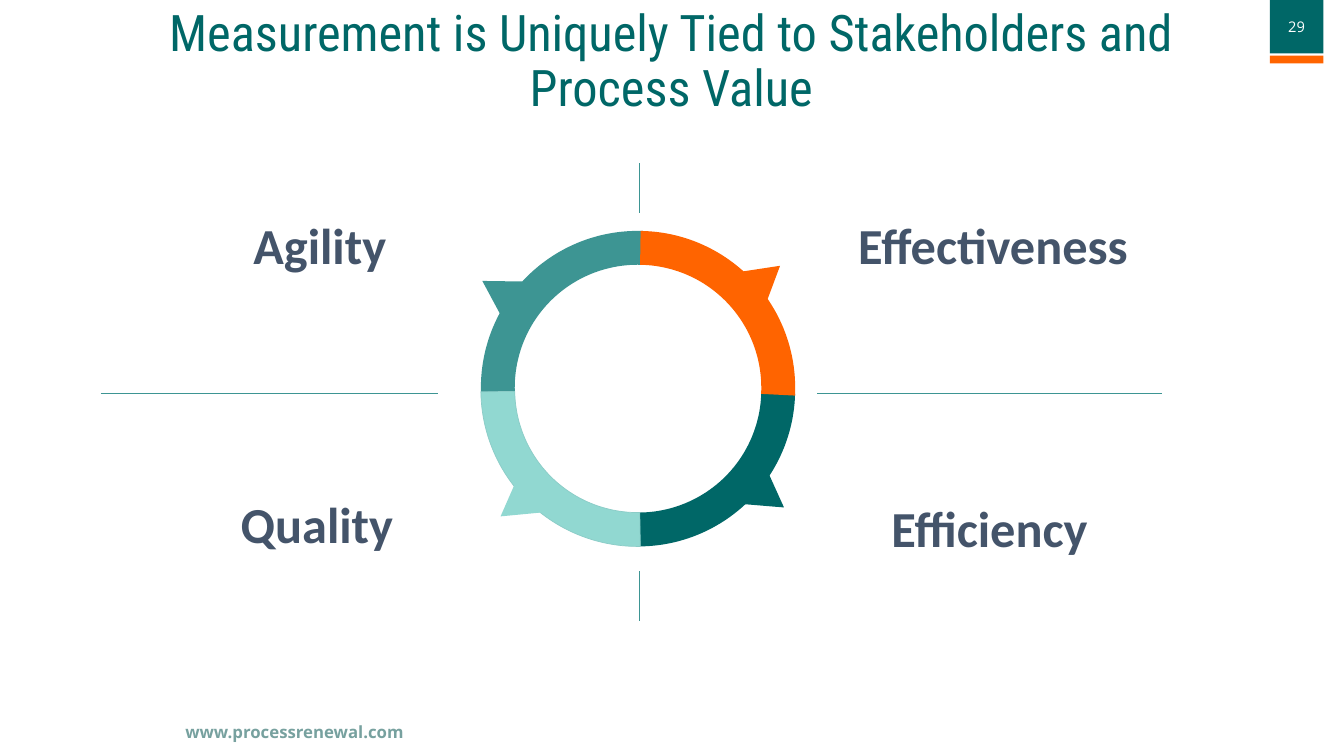
"""Builds the slide on measurement, stakeholders and process value."""
from dataclasses import dataclass

from lxml.etree import SubElement
from pptx import Presentation
from pptx.dml.color import RGBColor
from pptx.enum.shapes import MSO_CONNECTOR, MSO_SHAPE
from pptx.enum.text import MSO_ANCHOR, PP_ALIGN
from pptx.oxml.ns import qn
from pptx.shapes.autoshape import Shape
from pptx.slide import Slide
from pptx.util import Cm, Pt


@dataclass(frozen=True)
class Theme:
    """Colours, fonts and type sizes."""
    dark: str = "006767"
    teal: str = "3D9593"
    mint: str = "91D8D1"
    mint_edge: str = "8BCCC7"
    orange: str = "FF6400"
    slate: str = "44546A"
    footer: str = "77A19F"
    white: str = "FFFFFF"
    title_font: str = "Roboto Condensed"
    label_font: str = "Calibri"
    small_font: str = "Open Sans"
    large_size: float = 36
    footer_size: float = 12
    number_size: float = 10.5
    line_width: float = 0.5


@dataclass(frozen=True)
class Box:
    """Place and size in centimetres."""
    left: float
    top: float
    width: float
    height: float


@dataclass(frozen=True)
class Caption:
    """A text with its box and look."""
    text: str
    box: Box
    font: str
    size: float
    color: str
    bold: bool = False
    align: PP_ALIGN = PP_ALIGN.CENTER
    anchor: MSO_ANCHOR = MSO_ANCHOR.TOP
    line_spacing: float = 1.0


@dataclass(frozen=True)
class Segment:
    """A ring quarter, in clockwise degrees from the right, and its pointer."""
    color: str
    left: float
    top: float
    start: float
    end: float
    pointer_left: float
    pointer_top: float
    pointer_rotation: float
    edge: str = ""


@dataclass(frozen=True)
class Divider:
    """A straight line between two points in centimetres."""
    start_x: float
    start_y: float
    end_x: float
    end_y: float


THEME = Theme()
RING_SIZE = 7.9
RING_THICKNESS = 0.108
POINTER_WIDTH, POINTER_HEIGHT = 1.07, 0.91
ADJUSTMENT_PER_DEGREE = 0.6

SEGMENTS = [
    Segment(THEME.teal, 12.12, 5.82, 178, 272.4, 12.01, 6.86, 301.3),
    Segment(THEME.dark, 12.14, 5.87, 1.5, 90.9, 18.85, 12.07, 125.2),
    Segment(THEME.mint, 12.12, 5.87, 89, 179.2, 12.45, 12.29, 234.1, THEME.mint_edge),
    Segment(THEME.orange, 12.14, 5.82, 270.8, 2.9, 18.77, 6.53, 50.9),
]
DIVIDERS = [
    Divider(2.54, 9.91, 11.05, 9.91),
    Divider(20.6, 9.91, 29.29, 9.91),
    Divider(16.1, 4.11, 16.1, 5.36),
    Divider(16.12, 14.4, 16.12, 15.65),
]
LABELS = {
    "Agility ": Box(3, 5.26, 10.41, 1.8),
    "Quality ": Box(3.05, 12.29, 10.16, 1.8),
    "Effectiveness ": Box(19.91, 5.26, 10.52, 1.8),
    "Efficiency ": Box(19.86, 12.4, 10.44, 1.8),
}
CAPTIONS = [
    Caption("29", Box(31.67, 0.03, 2.01, 1.3), THEME.small_font, THEME.number_size,
            THEME.white, anchor=MSO_ANCHOR.MIDDLE),
    Caption("www.processrenewal.com", Box(4.42, 18.06, 6.3, 0.76), THEME.small_font,
            THEME.footer_size, THEME.footer, bold=True, align=PP_ALIGN.LEFT),
    Caption("Measurement is Uniquely Tied to Stakeholders and Process Value",
            Box(1.96, 0.64, 29.92, 1.88), THEME.title_font, THEME.large_size,
            THEME.dark, anchor=MSO_ANCHOR.MIDDLE, line_spacing=0.9),
    *(Caption(text, box, THEME.label_font, THEME.large_size, THEME.slate, bold=True)
      for text, box in LABELS.items()),
]


def add_filled_shape(slide: Slide, kind: MSO_SHAPE, box: Box, color: str,
                     edge: str = "") -> Shape:
    """Add a flat shape, outlined only when an edge colour is given."""
    shape = slide.shapes.add_shape(
        kind, Cm(box.left), Cm(box.top), Cm(box.width), Cm(box.height))
    shape.shadow.inherit = False
    shape.fill.solid()
    shape.fill.fore_color.rgb = RGBColor.from_string(color)
    if edge:
        shape.line.color.rgb = RGBColor.from_string(edge)
        shape.line.width = Pt(THEME.line_width)
    else:
        shape.line.fill.background()
    return shape


def add_arc(slide: Slide, segment: Segment) -> None:
    """Add one quarter of the ring."""
    box = Box(segment.left, segment.top, RING_SIZE, RING_SIZE)
    arc = add_filled_shape(slide, MSO_SHAPE.BLOCK_ARC, box, segment.color, segment.edge)
    arc.adjustments[0] = segment.start * ADJUSTMENT_PER_DEGREE
    arc.adjustments[1] = segment.end * ADJUSTMENT_PER_DEGREE
    arc.adjustments[2] = RING_THICKNESS


def add_pointer(slide: Slide, segment: Segment) -> None:
    """Add the triangle that points outwards from a ring quarter."""
    box = Box(segment.pointer_left, segment.pointer_top, POINTER_WIDTH, POINTER_HEIGHT)
    pointer = add_filled_shape(slide, MSO_SHAPE.ISOSCELES_TRIANGLE, box, segment.color)
    pointer.rotation = segment.pointer_rotation


def add_divider(slide: Slide, divider: Divider) -> None:
    """Add a thin line without a shadow."""
    connector = slide.shapes.add_connector(
        MSO_CONNECTOR.STRAIGHT, Cm(divider.start_x), Cm(divider.start_y),
        Cm(divider.end_x), Cm(divider.end_y))
    connector.line.color.rgb = RGBColor.from_string(THEME.teal)
    connector.line.width = Pt(THEME.line_width)
    SubElement(connector._element.spPr, qn("a:effectLst"))


def add_caption(slide: Slide, caption: Caption) -> None:
    """Add a wrapped text box with one formatted paragraph."""
    box = caption.box
    text_frame = slide.shapes.add_textbox(
        Cm(box.left), Cm(box.top), Cm(box.width), Cm(box.height)).text_frame
    text_frame.word_wrap = True
    text_frame.vertical_anchor = caption.anchor
    text_frame.text = caption.text
    paragraph = text_frame.paragraphs[0]
    paragraph.alignment = caption.align
    paragraph.line_spacing = caption.line_spacing
    font = paragraph.runs[0].font
    font.name = caption.font
    font.size = Pt(caption.size)
    font.bold = caption.bold
    font.color.rgb = RGBColor.from_string(caption.color)


def main() -> None:
    """Build and save the presentation."""
    presentation = Presentation()
    presentation.slide_width, presentation.slide_height = Cm(33.87), Cm(19.05)
    slide = presentation.slides.add_slide(presentation.slide_layouts[6])
    add_filled_shape(slide, MSO_SHAPE.RECTANGLE, Box(32, 0, 1.35, 1.35), THEME.dark)
    add_filled_shape(slide, MSO_SHAPE.RECTANGLE, Box(32, 1.4, 1.35, 0.2), THEME.orange)
    for segment in SEGMENTS:
        add_arc(slide, segment)
    for segment in SEGMENTS:
        add_pointer(slide, segment)
    for divider in DIVIDERS:
        add_divider(slide, divider)
    for caption in CAPTIONS:
        add_caption(slide, caption)
    presentation.save("out.pptx")


if __name__ == "__main__":
    main()
